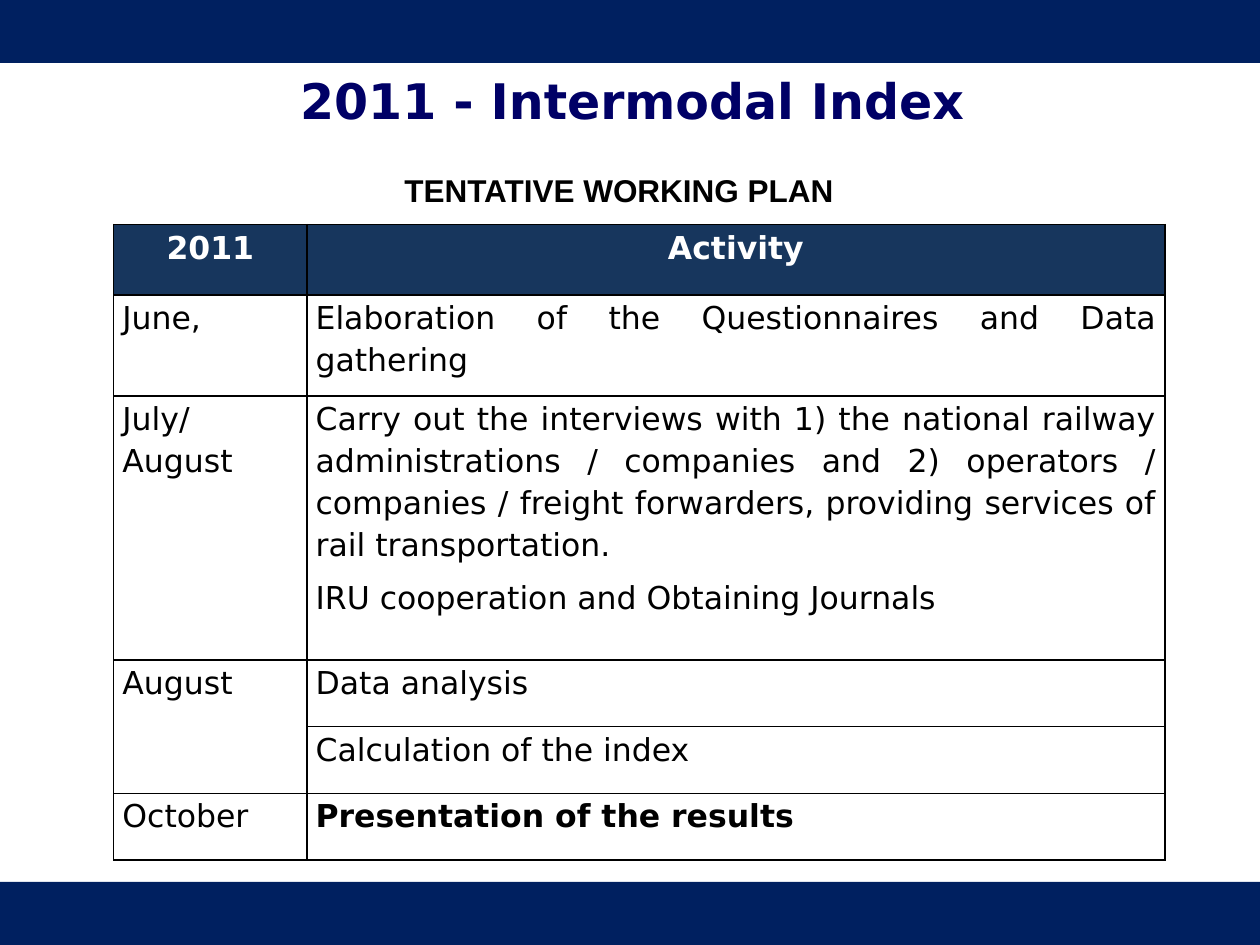
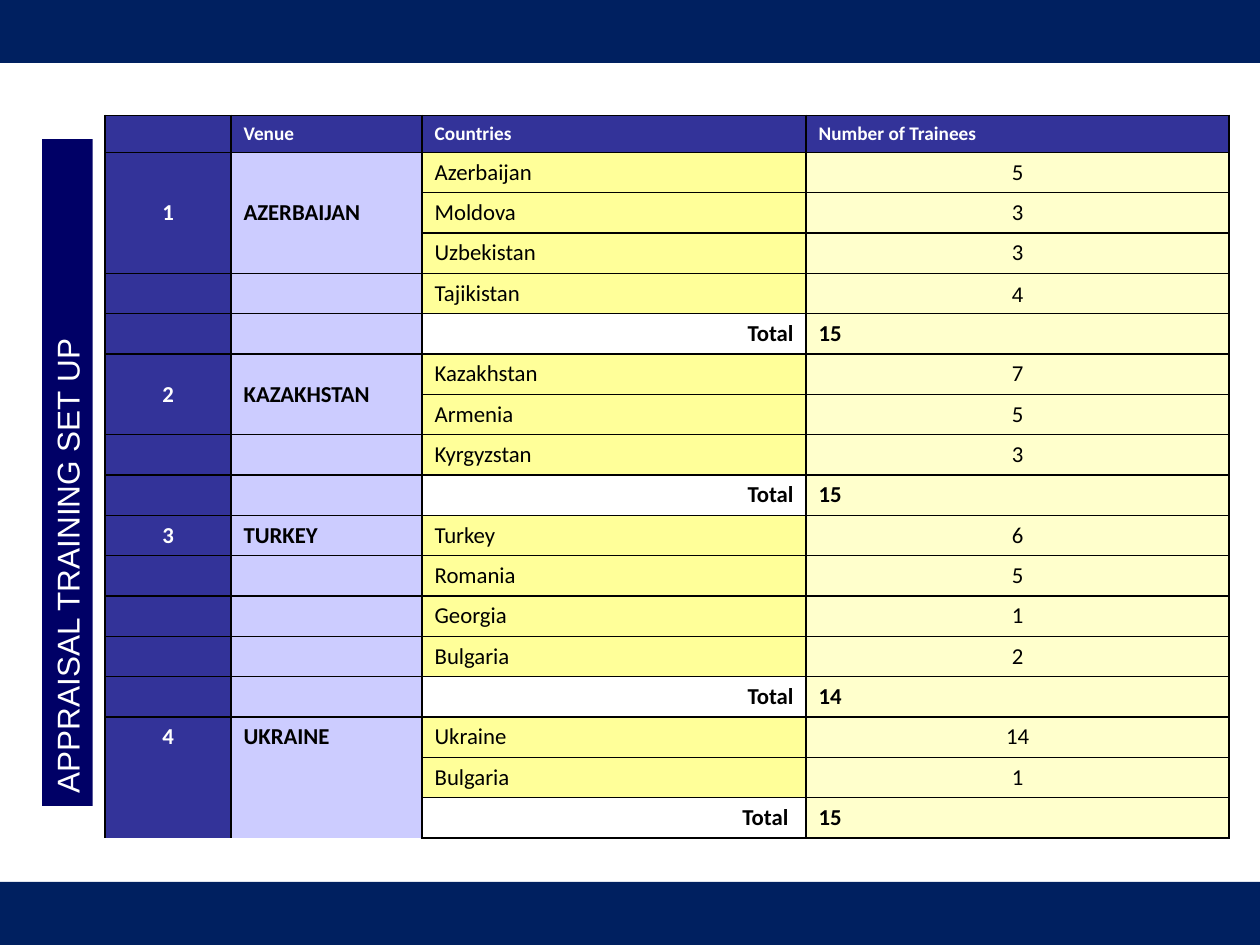
"""Builds two slides: the working plan and the training set up."""
from lxml.etree import SubElement
from pptx import Presentation
from pptx.dml.color import RGBColor
from pptx.enum.shapes import MSO_SHAPE
from pptx.enum.text import MSO_ANCHOR, PP_ALIGN
from pptx.oxml.ns import qn
from pptx.util import Pt

BAND = RGBColor(0x00, 0x20, 0x60)
NAVY = RGBColor(0x00, 0x00, 0x66)
PLAN_HEAD = RGBColor(0x17, 0x36, 0x5D)
INDIGO = RGBColor(0x33, 0x33, 0x99)
LAVENDER = RGBColor(0xCC, 0xCC, 0xFF)
YELLOW = RGBColor(0xFF, 0xFF, 0x99)
CREAM = RGBColor(0xFF, 0xFF, 0xCC)
WHITE = RGBColor(0xFF, 0xFF, 0xFF)
BLACK = RGBColor(0x00, 0x00, 0x00)

PLAN = [
    ("June,", "Elaboration of the Questionnaires and Data gathering"),
    ("July/ August",
     "Carry out the interviews with 1) the national railway administrations / companies "
     "and 2) operators / companies / freight forwarders, providing services of rail "
     "transportation. \nIRU cooperation and Obtaining Journals"),
    ("August", "Data analysis"),
    ("", "Calculation of the index"),
    ("October", "Presentation of the results"),
]

VENUES = [
    ("AZERBAIJAN", 3, {"Azerbaijan": 5, "Moldova": 3, "Uzbekistan": 3, "Tajikistan": 4}),
    ("KAZAKHSTAN", 2, {"Kazakhstan": 7, "Armenia": 5, "Kyrgyzstan": 3}),
    ("TURKEY", 1, {"Turkey": 6, "Romania": 5, "Georgia": 1, "Bulgaria": 2}),
    ("UKRAINE", 1, {"Ukraine": 14, "Bulgaria": 1}),
]


def write(frame, text, font="Calibri", size=13, color=BLACK, bold=False,
          align=PP_ALIGN.LEFT, spacing=None, after=None):
    """Fill a text frame, one paragraph for each line of text."""
    for number, line in enumerate(text.split("\n")):
        para = frame.add_paragraph() if number else frame.paragraphs[0]
        para.alignment = align
        if spacing:
            para.line_spacing = spacing
        if after:
            para.space_after = Pt(after)
        span = para.add_run()
        span.text = line
        span.font.name = font
        span.font.size = Pt(size)
        span.font.bold = bold
        span.font.color.rgb = color


class Slides:
    """Holds the deck, its shared style and the current page."""

    def __init__(self):
        """Open an empty 10 by 7.5 inch deck."""
        self.deck = Presentation()
        self.deck.slide_width, self.deck.slide_height = Pt(720), Pt(540)
        self.page = None

    def start_page(self):
        """Add a blank page with its bottom and top bands."""
        self.page = self.deck.slides.add_slide(self.deck.slide_layouts[6])
        for top in (504, 0):
            self.rectangle(0, top, 720, 36, BAND)

    def rectangle(self, left, top, width, height, color):
        """Add a plain filled rectangle."""
        shape = self.page.shapes.add_shape(
            MSO_SHAPE.RECTANGLE, Pt(left), Pt(top), Pt(width), Pt(height))
        shape.shadow.inherit = False
        shape.fill.solid()
        shape.fill.fore_color.rgb = color
        shape.line.fill.background()
        return shape

    def text(self, left, top, width, height, text, wrap=True,
             anchor=MSO_ANCHOR.TOP, **style):
        """Add a text box."""
        box = self.page.shapes.add_textbox(Pt(left), Pt(top), Pt(width), Pt(height))
        box.text_frame.word_wrap = wrap
        box.text_frame.vertical_anchor = anchor
        write(box.text_frame, text, **style)

    def title(self, text):
        """Add the page title."""
        self.text(36, 36, 660, 42, text, anchor=MSO_ANCHOR.MIDDLE, font="DejaVu Sans",
                  size=28, color=NAVY, bold=True, align=PP_ALIGN.CENTER)

    def side_label(self, left, top, width, height, text):
        """Add a filled label that reads upwards, placed by its visible frame."""
        shift = (height - width) / 2
        label = self.rectangle(left - shift, top + shift, height, width, NAVY)
        label.rotation = 270
        label.text_frame.word_wrap = True
        label.text_frame.vertical_anchor = MSO_ANCHOR.TOP
        write(label.text_frame, text, font="Arial", size=18, color=WHITE)

    def table(self, left, top, widths, heights):
        """Add a table with a black grid and no banding."""
        grid = self.page.shapes.add_table(
            len(heights), len(widths), Pt(left), Pt(top),
            Pt(sum(widths)), Pt(sum(heights))).table
        grid.first_row = grid.horz_banding = False
        for column, width in zip(grid.columns, widths):
            column.width = Pt(width)
        for row, height in zip(grid.rows, heights):
            row.height = Pt(height)
        for cell in grid.iter_cells():
            SubElement(cell.text_frame.paragraphs[0]._p, qn("a:endParaRPr"), sz="1000")
            self.borders(cell)
            cell.fill.background()
        return grid

    def borders(self, cell, sides="LRTB"):
        """Draw the named sides of a cell and clear the others."""
        props = cell._tc.get_or_add_tcPr()
        for place, side in enumerate("LRTB"):
            for old in props.findall(qn(f"a:ln{side}")):
                props.remove(old)
            line = SubElement(props, qn(f"a:ln{side}"), w=str(Pt(1)))
            props.insert(place, line)
            if side in sides:
                fill = SubElement(line, qn("a:solidFill"))
                SubElement(fill, qn("a:srgbClr"), val=str(BLACK))
            else:
                SubElement(line, qn("a:noFill"))

    def cell(self, cell, text="", fill=None, anchor=MSO_ANCHOR.BOTTOM, margins=None, **style):
        """Fill one table cell."""
        cell.vertical_anchor = anchor
        if margins:
            cell.margin_left = cell.margin_right = Pt(margins[0])
            cell.margin_top = cell.margin_bottom = Pt(margins[1])
        if fill is not None:
            cell.fill.solid()
            cell.fill.fore_color.rgb = fill
        if text:
            write(cell.text_frame, text, **style)


def working_plan(slides):
    """Build the working plan page."""
    slides.start_page()
    slides.title("2011 - Intermodal Index ")
    slides.text(224, 94.3, 267, 29, "TENTATIVE WORKING PLAN", wrap=False,
                font="Arial", size=18, bold=True)
    plan = slides.table(65, 128.3, [110.4, 490.3], [40.3, 57.6, 151] + [38.1] * 3)
    style = dict(font="DejaVu Sans", size=18, spacing=1.15, after=6,
                 anchor=MSO_ANCHOR.TOP, margins=(5, 0))
    for column, heading in enumerate(("2011", "Activity")):
        slides.cell(plan.cell(0, column), heading, fill=PLAN_HEAD, color=WHITE,
                    bold=True, align=PP_ALIGN.CENTER, **style)
    plan.cell(3, 0).merge(plan.cell(4, 0))
    for row, (month, activity) in enumerate(PLAN, 1):
        slides.cell(plan.cell(row, 0), month,
                    align=PP_ALIGN.LEFT if row == 1 else PP_ALIGN.JUSTIFY, **style)
        slides.cell(plan.cell(row, 1), activity, bold=row == len(PLAN),
                    align=PP_ALIGN.JUSTIFY, **style)


def training_set_up(slides):
    """Build the training page, one block of rows for each venue."""
    slides.start_page()
    row_count = sum(len(trainees) + 1 for _, _, trainees in VENUES)
    grid = slides.table(60, 66, [72, 109.2, 219.4, 241.8], [21.1] + [23.07] * row_count)
    for column, heading in enumerate(("", "Venue", "Countries", "Number of Trainees")):
        slides.cell(grid.cell(0, column), heading, fill=INDIGO, size=11,
                    color=WHITE, bold=True)
    first = 1
    for number, (venue, merged, trainees) in enumerate(VENUES, 1):
        is_last = number == len(VENUES)
        total_row = first + len(trainees)
        for column, fill in enumerate((INDIGO, LAVENDER)):
            for row in range(first, total_row + 1):
                slides.cell(grid.cell(row, column), fill=fill)
                if is_last:
                    slides.borders(grid.cell(row, column), "LRT" if row == first else "LR")
            if merged > 1:
                grid.cell(first, column).merge(grid.cell(first + merged - 1, column))
        slides.cell(grid.cell(first, 0), str(number), anchor=MSO_ANCHOR.MIDDLE,
                    color=WHITE, bold=True, align=PP_ALIGN.CENTER)
        slides.cell(grid.cell(first, 1), venue, anchor=MSO_ANCHOR.MIDDLE, bold=True)
        for row, (country, count) in enumerate(trainees.items(), first):
            special = dict(font="Arial", size=12) if country == "Tajikistan" else {}
            slides.cell(grid.cell(row, 2), country, fill=YELLOW)
            slides.cell(grid.cell(row, 3), str(count), fill=CREAM,
                        align=PP_ALIGN.CENTER, **special)
        slides.cell(grid.cell(total_row, 2), "Total " if is_last else "Total",
                    bold=True, align=PP_ALIGN.RIGHT)
        slides.cell(grid.cell(total_row, 3), str(sum(trainees.values())),
                    fill=CREAM, bold=True)
        first = total_row + 1
    slides.side_label(24, 79.5, 29, 381, "APPRAISAL TRAINING SET UP")


def main():
    """Build both pages and save the deck."""
    slides = Slides()
    working_plan(slides)
    training_set_up(slides)
    slides.deck.save("out.pptx")


if __name__ == "__main__":
    main()
